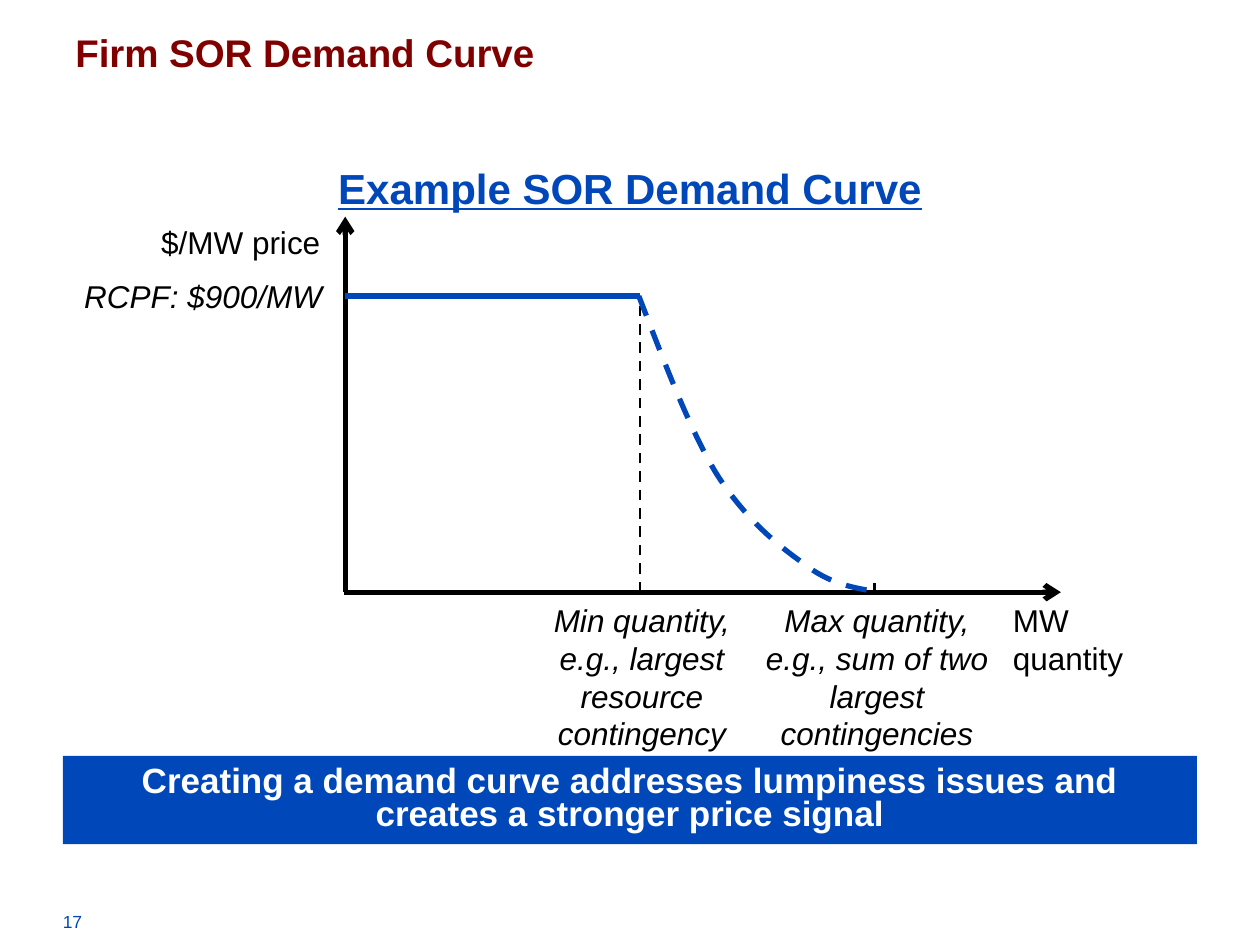
from dataclasses import dataclass
from typing import Optional

from lxml import etree
from pptx import Presentation
from pptx.dml.color import RGBColor
from pptx.enum.dml import MSO_LINE
from pptx.enum.shapes import MSO_CONNECTOR, MSO_SHAPE
from pptx.enum.text import MSO_ANCHOR, PP_ALIGN
from pptx.oxml.ns import qn
from pptx.util import Inches, Pt

DASH = MSO_LINE.DASH
STRAIGHT = MSO_CONNECTOR.STRAIGHT
RECTANGLE = MSO_SHAPE.RECTANGLE
TOP, MIDDLE, BOTTOM = MSO_ANCHOR.TOP, MSO_ANCHOR.MIDDLE, MSO_ANCHOR.BOTTOM
LEFT, CENTER = PP_ALIGN.LEFT, PP_ALIGN.CENTER


@dataclass(frozen=True)
class Theme:
    font: str = "Arial"
    blue: RGBColor = RGBColor(0x00, 0x48, 0xB9)
    maroon: RGBColor = RGBColor(0x80, 0x00, 0x00)
    black: RGBColor = RGBColor(0x00, 0x00, 0x00)
    white: RGBColor = RGBColor(0xFF, 0xFF, 0xFF)
    chart_title: int = 24
    heading: int = 22
    banner: int = 20
    label: int = 18
    page_number: int = 10
    thick: float = 3
    thin: float = 1.5


THEME = Theme()


@dataclass(frozen=True)
class Label:
    text: str
    left: float
    top: float
    width: float
    height: float
    size: int = THEME.label
    color: RGBColor = THEME.black
    bold: bool = False
    italic: bool = False
    underline: bool = False
    align: PP_ALIGN = LEFT
    anchor: MSO_ANCHOR = TOP
    line_spacing: Optional[float] = None
    wrap: bool = True
    fill: Optional[RGBColor] = None
    side_margin: float = 0.1


@dataclass(frozen=True)
class Line:
    start: tuple[float, float]
    end: tuple[float, float]
    color: RGBColor = THEME.black
    width: float = THEME.thick
    dashed: bool = False
    arrow: bool = False


ORIGIN_X, AXIS_Y = 2.74, 4.7
MIN_X, MAX_X = 5.08, 6.94
PRICE_Y, AXIS_TOP = 2.35, 1.72
QUANTITY_TOP = 4.72

LABELS = [
    Label("17", 0.4, 7.18, 2.31, 0.27, THEME.page_number, THEME.blue),
    Label("Example SOR Demand Curve", 0.5, 0.99, 9, 0.75, THEME.chart_title, THEME.blue,
          bold=True, underline=True, align=CENTER, anchor=BOTTOM),
    Label("Firm SOR Demand Curve", 0.5, 0.25, 9, 0.75, THEME.heading, THEME.maroon,
          bold=True, line_spacing=0.8),
    Label("Creating a demand curve addresses lumpiness issues and creates a stronger price signal",
          0.5, 6, 9, 0.7, THEME.banner, THEME.white, bold=True, align=CENTER,
          anchor=MIDDLE, line_spacing=0.8, fill=THEME.blue, side_margin=0.2),
    Label("$/MW price", 1.18, AXIS_TOP, 1.55, 0.4, wrap=False),
    Label("MW quantity", 7.94, QUANTITY_TOP, 1.42, 0.71),
    Label("Min quantity, e.g., largest resource contingency",
          4.03, QUANTITY_TOP, 2.13, 1.31, italic=True, align=CENTER),
    Label("RCPF: $900/MW", 0.57, 2.15, 2.12, 0.4, italic=True),
    Label("Max quantity, e.g., sum of two largest contingencies",
          5.87, QUANTITY_TOP, 2.18, 1.31, italic=True, align=CENTER),
]

LINES = [
    Line((ORIGIN_X - 0.01, AXIS_Y), (8.42, AXIS_Y), arrow=True),
    Line((ORIGIN_X, AXIS_Y), (ORIGIN_X, AXIS_TOP), arrow=True),
    Line((ORIGIN_X, PRICE_Y), (MIN_X, PRICE_Y), THEME.blue),
    Line((MIN_X, AXIS_Y), (MIN_X, PRICE_Y), width=THEME.thin, dashed=True),
    Line((MAX_X, AXIS_Y), (MAX_X, 4.63), width=THEME.thin, dashed=True),
]

# The start point, then two control points and an end point for each segment.
DEMAND_CURVE = [
    (5.07, 2.35),
    (5.27, 2.87), (5.47, 3.4), (5.68, 3.75),
    (5.9, 4.1), (6.15, 4.31), (6.36, 4.46),
    (6.56, 4.62), (6.74, 4.66), (6.92, 4.69),
]


def add_label(slide, label: Label) -> None:
    box = tuple(Inches(n) for n in (label.left, label.top, label.width, label.height))
    if label.fill is None:
        shape = slide.shapes.add_textbox(*box)
    else:
        shape = slide.shapes.add_shape(RECTANGLE, *box)
        shape.shadow.inherit = False
        shape.fill.solid()
        shape.fill.fore_color.rgb = label.fill
        shape.line.fill.background()
    frame = shape.text_frame
    frame.word_wrap = label.wrap
    frame.vertical_anchor = label.anchor
    frame.margin_left = frame.margin_right = Inches(label.side_margin)
    paragraph = frame.paragraphs[0]
    paragraph.text = label.text
    paragraph.alignment = label.align
    paragraph.line_spacing = label.line_spacing
    font = paragraph.font
    font.name, font.size, font.color.rgb = THEME.font, Pt(label.size), label.color
    font.bold, font.italic, font.underline = label.bold, label.italic, label.underline


def style_line(line_format, color: RGBColor, width: float, dashed: bool) -> None:
    line_format.color.rgb = color
    line_format.width = Pt(width)
    if dashed:
        line_format.dash_style = DASH


def add_line(slide, line: Line) -> None:
    ends = (Inches(n) for n in line.start + line.end)
    connector = slide.shapes.add_connector(STRAIGHT, *ends)
    style_line(connector.line, line.color, line.width, line.dashed)
    properties = connector._element.spPr
    if line.arrow:
        etree.SubElement(properties.find(qn("a:ln")), qn("a:tailEnd"), type="arrow")
    etree.SubElement(properties, qn("a:effectLst"))


def add_curve(slide, points: list[tuple[float, float]]) -> None:
    """Draw a dashed curve, joining each three line steps into one Bezier segment."""
    start, *rest = [(Inches(x), Inches(y)) for x, y in points]
    builder = slide.shapes.build_freeform(*start)
    builder.add_line_segments(rest, close=False)
    shape = builder.convert_to_shape()
    shape.shadow.inherit = False
    shape.fill.background()
    style_line(shape.line, THEME.blue, THEME.thick, dashed=True)
    outline = next(shape._element.iter(qn("a:path")))
    steps = outline.findall(qn("a:lnTo"))
    for first in range(0, len(steps), 3):
        segment = etree.SubElement(outline, qn("a:cubicBezTo"))
        for step in steps[first:first + 3]:
            segment.append(step[0])
            outline.remove(step)


def main() -> None:
    presentation = Presentation()
    presentation.slide_width, presentation.slide_height = Inches(10), Inches(7.5)
    slide = presentation.slides.add_slide(presentation.slide_layouts[6])
    for label in LABELS:
        add_label(slide, label)
    for line in LINES:
        add_line(slide, line)
    add_curve(slide, DEMAND_CURVE)
    presentation.save("out.pptx")


if __name__ == "__main__":
    main()
